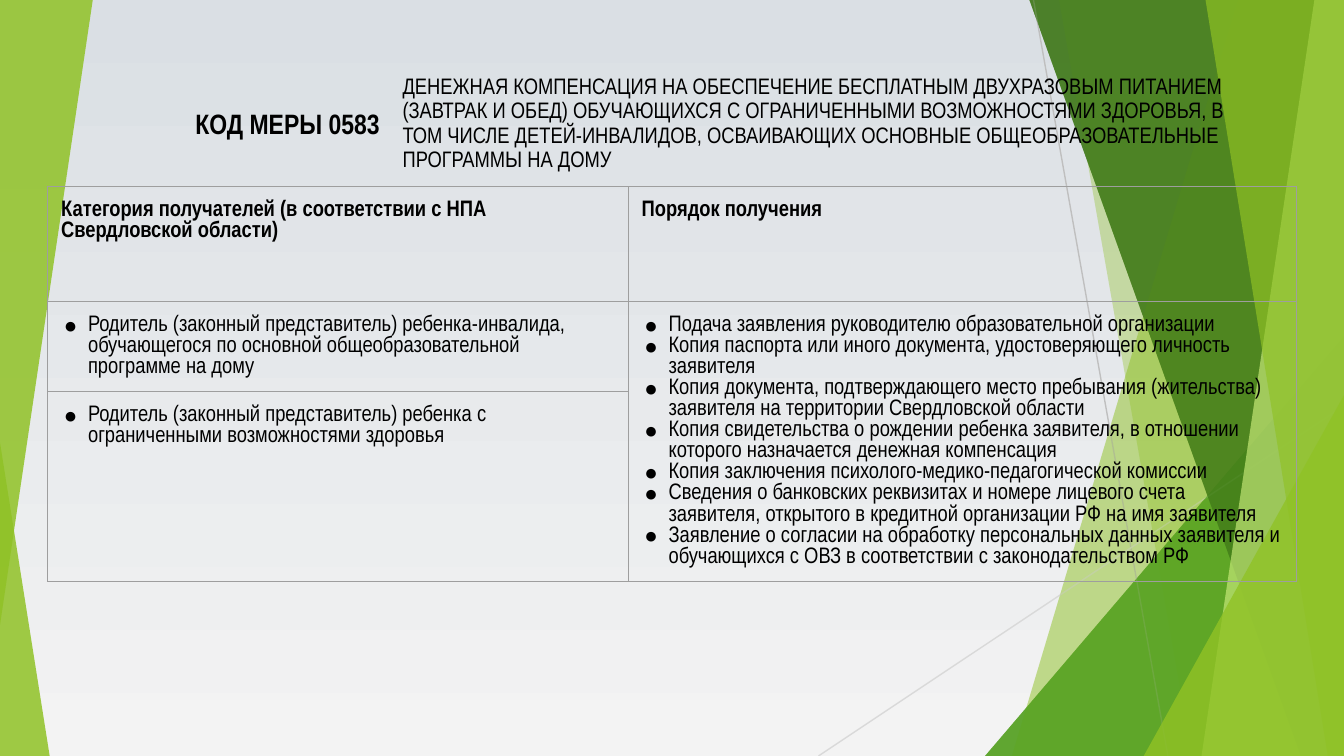
import dataclasses

import lxml.etree
import pptx
import pptx.dml.color
import pptx.enum.shapes
import pptx.enum.text
import pptx.oxml.ns
import pptx.util

ALIGN = pptx.enum.text.PP_ALIGN
MIDDLE = pptx.enum.text.MSO_ANCHOR.MIDDLE
COLS, ROWS = 100, 56.25  # layout grid


@dataclasses.dataclass(frozen=True)
class Theme:
    font: str = "Arial Narrow"
    bullet_font: str = "Arial"
    body: int = 12
    code: int = 15
    ink: str = "000000"
    border: str = "9E9E9E"
    sky: str = "DADFE4"
    ground: str = "F3F3F3"
    lime: str = "90C226"
    green: str = "54A021"
    forest: str = "3F7819"
    pale: str = "C0E474"
    ray_dark: str = "BFBFBF"
    ray_light: str = "D9D9D9"
    hairline: float = 0.75


def rgb(color):
    return pptx.dml.color.RGBColor.from_string(color)


def sub(parent, tag, **attrs):
    child = lxml.etree.SubElement(parent, pptx.oxml.ns.qn(tag))
    for name, value in attrs.items():
        child.set(name, str(value))
    return child


class SlideBuilder:
    def __init__(self, prs, theme):
        self.theme = theme
        self.col = prs.slide_width / COLS
        self.row = prs.slide_height / ROWS
        self.s = prs.slides.add_slide(prs.slide_layouts[5])

    def x(self, cols):
        return round(cols * self.col)

    def y(self, rows):
        return round(rows * self.row)

    def box(self, left, top, width, height):
        return self.x(left), self.y(top), self.x(width), self.y(height)

    def background(self):
        fill = self.s.background.fill
        fill.gradient()
        fill.gradient_angle = 270
        for stop, color in zip(fill.gradient_stops, (self.theme.sky, self.theme.ground)):
            stop.color.rgb = rgb(color)

    def paint(self, sp, color, opacity):
        sp.shadow.inherit = False
        sp.fill.solid()
        sp.fill.fore_color.rgb = rgb(color)
        sp.line.fill.background()
        clr = sp.element.spPr.find(".//" + pptx.oxml.ns.qn("a:srgbClr"))
        sub(clr, "a:alpha", val=opacity * 1000)

    def facet(self, top_x, bottom_x, color, opacity):
        """Sheet from a slanted left edge to the right side of the slide."""
        path = self.s.shapes.build_freeform(self.x(top_x), 0, scale=1.0)
        corners = ((COLS, 0), (COLS, ROWS), (bottom_x, ROWS))
        path.add_line_segments([(self.x(c), self.y(r)) for c, r in corners], close=True)
        self.paint(path.convert_to_shape(), color, opacity)

    def triangle(self, box, apex, color, opacity, rotation=0):
        kind = pptx.enum.shapes.MSO_SHAPE.ISOSCELES_TRIANGLE
        sp = self.s.shapes.add_shape(kind, *self.box(*box))
        sp.adjustments[0] = apex
        sp.rotation = rotation
        self.paint(sp, color, opacity)

    def line(self, x1, y1, x2, y2, color):
        kind = pptx.enum.shapes.MSO_CONNECTOR.STRAIGHT
        ln = self.s.shapes.add_connector(kind, self.x(x1), self.y(y1), self.x(x2), self.y(y2))
        ln.line.color.rgb = rgb(color)
        ln.line.width = pptx.util.Pt(self.theme.hairline)
        sub(ln.element.spPr, "a:effectLst")

    def fan(self):
        t = self.theme
        self.facet(92.1, 75.3, t.lime, 30)
        self.facet(78.8, 88.7, t.lime, 20)
        self.triangle((73.3, 25, 26.7, 31.25), 1, t.green, 72)
        self.facet(76.6, 96.8, t.forest, 70)
        self.facet(97.8, 89.4, t.pale, 70)
        self.facet(89.7, 98.8, t.lime, 65)
        self.triangle((85.1, 29.4, 14.9, 26.85), 1, t.lime, 80)

    def style(self, p, size, bold=False, align=ALIGN.LEFT, spacing=None):
        p.alignment = align
        p.line_spacing = spacing
        p.font.name = self.theme.font
        p.font.size = pptx.util.Pt(size)
        p.font.bold = bold
        p.font.color.rgb = rgb(self.theme.ink)

    def frame(self, tf, inset_x, inset_y):
        tf.word_wrap = True
        tf.auto_size = pptx.enum.text.MSO_AUTO_SIZE.NONE
        tf.vertical_anchor = MIDDLE
        tf.margin_left = tf.margin_right = pptx.util.Inches(inset_x)
        tf.margin_top = tf.margin_bottom = pptx.util.Inches(inset_y)

    def title(self, box, text):
        sp = self.s.shapes.title
        sp.left, sp.top, sp.width, sp.height = self.box(*box)
        self.frame(sp.text_frame, 0.07, 0.04)
        sp.text_frame.text = text
        self.style(sp.text_frame.paragraphs[0], self.theme.body, spacing=0.9)
        sp.element.getparent().append(sp.element)  # in front of the decoration

    def label(self, box, text):
        tf = self.s.shapes.add_textbox(*self.box(*box)).text_frame
        self.frame(tf, 0.1, 0.1)
        tf.text = text
        self.style(tf.paragraphs[0], self.theme.code, bold=True, align=ALIGN.RIGHT)

    def bullet(self, p):
        pPr = p._p.get_or_add_pPr()
        pPr.set("marL", str(pptx.util.Inches(0.2)))
        pPr.set("indent", str(pptx.util.Inches(-0.18)))
        sub(sub(pPr, "a:buClr"), "a:srgbClr", val=self.theme.ink)
        sub(pPr, "a:buFont", typeface=self.theme.bullet_font)
        sub(pPr, "a:buChar", char="●")

    def cell(self, cell, lines, header):
        cell.margin_left = cell.margin_right = pptx.util.Inches(0.1)
        cell.margin_top = cell.margin_bottom = pptx.util.Inches(0.1)
        tcPr = cell._tc.get_or_add_tcPr()
        for side in "LRTB":
            ln = sub(tcPr, "a:ln" + side, w=pptx.util.Pt(self.theme.hairline))
            sub(sub(ln, "a:solidFill"), "a:srgbClr", val=self.theme.border)
        cell.fill.background()
        cell.text_frame.text = "\n".join(lines)
        for p in cell.text_frame.paragraphs:
            if not header:
                self.bullet(p)
            self.style(p, self.theme.body, bold=header)

    def table(self, left, top, widths, heights, rows):
        box = self.box(left, top, sum(widths), sum(heights))
        table = self.s.shapes.add_table(len(heights), len(widths), *box).table
        table.first_row = table.horz_banding = False
        for column, width in zip(table.columns, widths):
            column.width = self.x(width)
        for row, height in zip(table.rows, heights):
            row.height = self.y(height)
        for i, row in enumerate(rows):
            for j, lines in enumerate(row):
                self.cell(table.cell(i, j), lines, header=i == 0)
        table.cell(1, 1).merge(table.cell(2, 1))


RECIPIENTS = [
    "Родитель (законный представитель) ребенка-инвалида, обучающегося по основной общеобразовательной программе на дому",
    "Родитель (законный представитель) ребенка с ограниченными возможностями здоровья",
]
STEPS = [
    "Подача заявления руководителю образовательной организации",
    "Копия паспорта или иного документа, удостоверяющего личность заявителя",
    "Копия документа, подтверждающего место пребывания (жительства) заявителя на территории Свердловской области",
    "Копия свидетельства о рождении ребенка заявителя, в отношении которого назначается денежная компенсация",
    "Копия заключения психолого-медико-педагогической комиссии",
    "Сведения о банковских реквизитах и номере лицевого счета заявителя, открытого в кредитной организации РФ на имя заявителя",
    "Заявление о согласии на обработку персональных данных заявителя и обучающихся с ОВЗ в соответствии с законодательством РФ",
]


def main():
    prs = pptx.Presentation()
    prs.slide_width, prs.slide_height = pptx.util.Inches(10), pptx.util.Inches(5.625)
    theme = Theme()
    b = SlideBuilder(prs, theme)

    # Background and two layers of green facets
    b.background()
    b.fan()
    b.triangle((0, 32.9, 3.7, 23.35), 0, theme.lime, 85)
    b.line(76.9, 0, 86.9, ROWS, theme.ray_dark)
    b.line(COLS, 30.2, 60.9, ROWS, theme.ray_light)
    b.fan()
    b.triangle((0, 0, 6.9, 46.5), 1, theme.lime, 85, rotation=180)

    # Recipients and procedure
    header = [["Категория получателей (в соответствии с НПА Свердловской области)"],
              ["Порядок получения"]]
    b.table(3.55, 13.9, (43.2, 49.7), (8.55, 6.7, 14.1),
            [header, [RECIPIENTS[:1], STEPS], [RECIPIENTS[1:], []]])

    # Heading
    b.title((29.25, 5.35, 63, 7.7),
            "ДЕНЕЖНАЯ КОМПЕНСАЦИЯ НА ОБЕСПЕЧЕНИЕ БЕСПЛАТНЫМ ДВУХРАЗОВЫМ ПИТАНИЕМ (ЗАВТРАК И ОБЕД) "
            "ОБУЧАЮЩИХСЯ С ОГРАНИЧЕННЫМИ ВОЗМОЖНОСТЯМИ ЗДОРОВЬЯ, В ТОМ ЧИСЛЕ ДЕТЕЙ-ИНВАЛИДОВ, "
            "ОСВАИВАЮЩИХ ОСНОВНЫЕ ОБЩЕОБРАЗОВАТЕЛЬНЫЕ ПРОГРАММЫ НА ДОМУ")
    b.label((8.15, 5.3, 21.1, 7.7), "КОД МЕРЫ 0583")

    prs.save("out.pptx")


if __name__ == "__main__":
    main()
